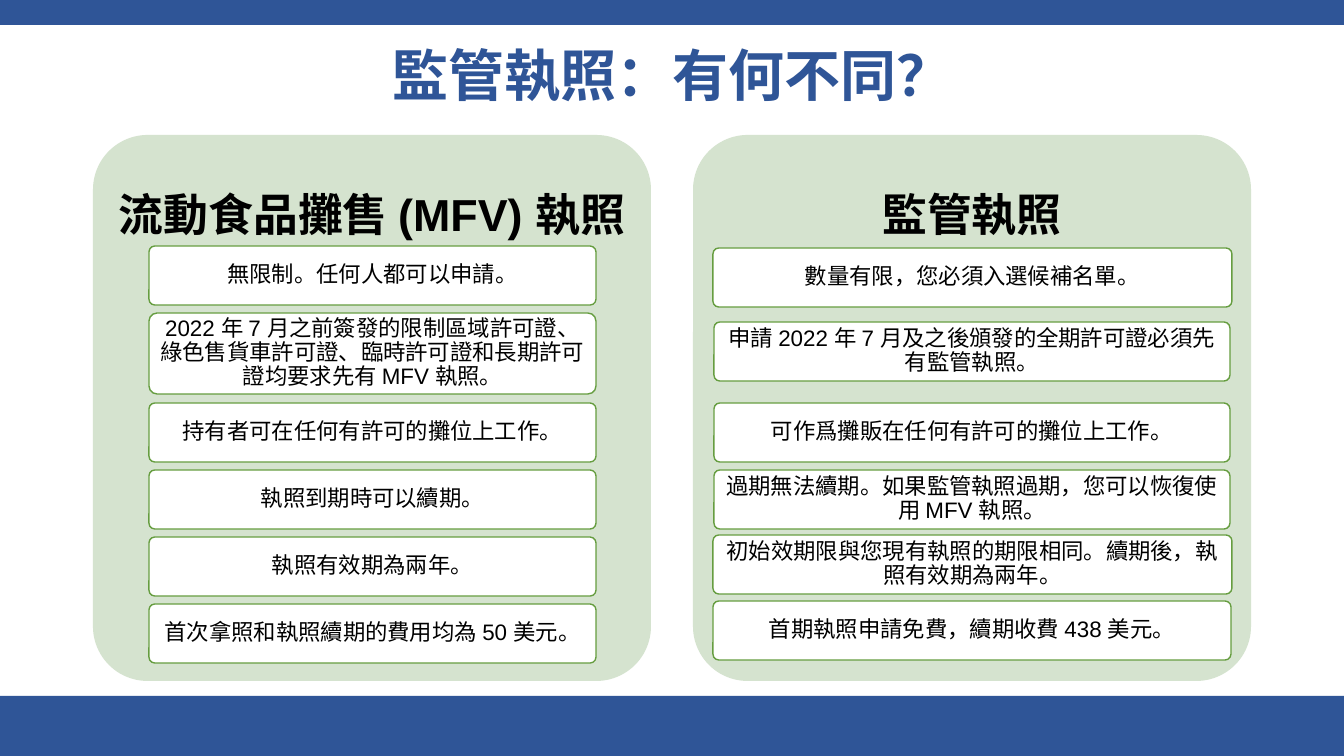
import pptx
import pptx.util
import pptx.dml.color
import pptx.enum.shapes
import pptx.enum.text
import pptx.oxml
import pptx.oxml.ns

PX = 914400 / 100.8
COLOURS = {"blue": "2F5597", "panel": "D5E3CF", "edge": "669D40",
           "white": "FFFFFF", "black": "000000"}
SANS = "Arial"
CJK = "Noto Sans CJK TC"
SHAPES = pptx.enum.shapes.MSO_SHAPE

TITLE_FONT = {"name": CJK, "size": pptx.util.Pt(40), "bold": True}
HEADING_FONT = {"name": SANS, "size": pptx.util.Pt(32), "bold": True}
CARD_FONT = {"size": pptx.util.Pt(16), "bold": False}

PANEL_TOP, PANEL_WIDTH, PANEL_HEIGHT = 135, 558, 546
CARD_HEIGHT = 59

# Each card: left, top, width, height, font, wording
MFV_LEFT, MFV_WIDTH = 149, 447
MFV_CARDS = [
    (MFV_LEFT, 246, MFV_WIDTH, CARD_HEIGHT, SANS, "無限制。任何人都可以申請。"),
    (MFV_LEFT, 313, MFV_WIDTH, 81, SANS,
     "2022 年 7 月之前簽發的限制區域許可證、綠色售貨車許可證、臨時許可證和長期許可證均要求先有 MFV 執照。"),
    (MFV_LEFT, 403, MFV_WIDTH, CARD_HEIGHT, CJK, "持有者可在任何有許可的攤位上工作。"),
    (MFV_LEFT, 470, MFV_WIDTH, CARD_HEIGHT, CJK, "執照到期時可以續期。"),
    (MFV_LEFT, 537, MFV_WIDTH, CARD_HEIGHT, CJK, "執照有效期為兩年。"),
    (MFV_LEFT, 604, MFV_WIDTH, CARD_HEIGHT, SANS, "首次拿照和執照續期的費用均為 50 美元。"),
]
SUPERVISORY_CARDS = [
    (713, 248, 519, CARD_HEIGHT, CJK, "數量有限，您必須入選候補名單。"),
    (714, 322, 516, CARD_HEIGHT, SANS, "申請 2022 年 7 月及之後頒發的全期許可證必須先有監管執照。"),
    (714, 403, 516, CARD_HEIGHT, CJK, "可作爲攤販在任何有許可的攤位上工作。"),
    (714, 470, 516, CARD_HEIGHT, SANS, "過期無法續期。如果監管執照過期，您可以恢復使用 MFV 執照。"),
    (713, 535, 519, CARD_HEIGHT, CJK, "初始效期限與您現有執照的期限相同。續期後，執照有效期為兩年。"),
    (713, 601, 518, CARD_HEIGHT, SANS, "首期執照申請免費，續期收費 438 美元。"),
]
PANELS = [(93, "流動食品攤售 (MFV) 執照", MFV_CARDS),
          (693, "監管執照", SUPERVISORY_CARDS)]


def emu(pixels):
    return pptx.util.Emu(round(pixels * PX))


def colour(name):
    return pptx.dml.color.RGBColor.from_string(COLOURS[name])


def set_attributes(target, values):
    for name, value in values.items():
        setattr(target, name, value)


def write(box, wording, font, ink, insets=(10, 5, 10, 5), wrap=True):
    """Fill a shape with one centred paragraph; insets are left, top, right, bottom."""
    frame = box.text_frame
    left, top, right, bottom = map(emu, insets)
    set_attributes(frame, {
        "auto_size": pptx.enum.text.MSO_AUTO_SIZE.NONE,
        "word_wrap": wrap,
        "vertical_anchor": pptx.enum.text.MSO_ANCHOR.MIDDLE,
        "margin_left": left, "margin_top": top,
        "margin_right": right, "margin_bottom": bottom,
    })
    para = frame.paragraphs[0]
    set_attributes(para, {"alignment": pptx.enum.text.PP_ALIGN.CENTER,
                          "line_spacing": 0.9})
    span = para.add_run()
    span.text = wording
    set_attributes(span.font, font)
    span.font.color.rgb = colour(ink)
    east_asian = pptx.oxml.parse_xml(
        f'<a:ea {pptx.oxml.ns.nsdecls("a")} typeface="{CJK}"/>')
    span.font._element.find(pptx.oxml.ns.qn("a:latin")).addnext(east_asian)


def add_block(page, kind, place, fill, edge=None):
    block = page.shapes.add_shape(kind, *map(emu, place))
    block.shadow.inherit = False
    block.fill.solid()
    block.fill.fore_color.rgb = colour(fill)
    if edge:
        block.line.color.rgb = colour(edge)
        block.line.width = pptx.util.Pt(1)
    else:
        block.line.fill.background()
    return block


def add_rounded(page, place, fill, edge=None):
    block = add_block(page, SHAPES.ROUNDED_RECTANGLE, place, fill, edge)
    block.adjustments[0] = 0.1
    return block


def add_title(page, wording):
    title = page.shapes.title
    place = zip(("left", "top", "width", "height"), map(emu, (93, 40, 1159, 76)))
    set_attributes(title, dict(place))
    write(title, wording, TITLE_FONT, "blue")


def add_panel(page, left, heading, cards):
    panel = add_rounded(page, (left, PANEL_TOP, PANEL_WIDTH, PANEL_HEIGHT), "panel")
    write(panel, heading, HEADING_FONT, "black", (0, 0, 0, 382), wrap=False)
    for *place, font_name, wording in cards:
        card = add_rounded(page, place, "white", "edge")
        write(card, wording, {**CARD_FONT, "name": font_name}, "black", (4, 3, 4, 3))


def main():
    deck = pptx.Presentation()
    deck.slide_width, deck.slide_height = emu(1344), emu(756)
    page = deck.slides.add_slide(deck.slide_layouts.get_by_name("Title Only"))
    for top, height in ((0, 25), (696, 60)):
        add_block(page, SHAPES.RECTANGLE, (0, top, 1344, height), "blue")
    add_title(page, "監管執照：有何不同？")
    for left, heading, cards in PANELS:
        add_panel(page, left, heading, cards)
    deck.save("out.pptx")


if __name__ == "__main__":
    main()
